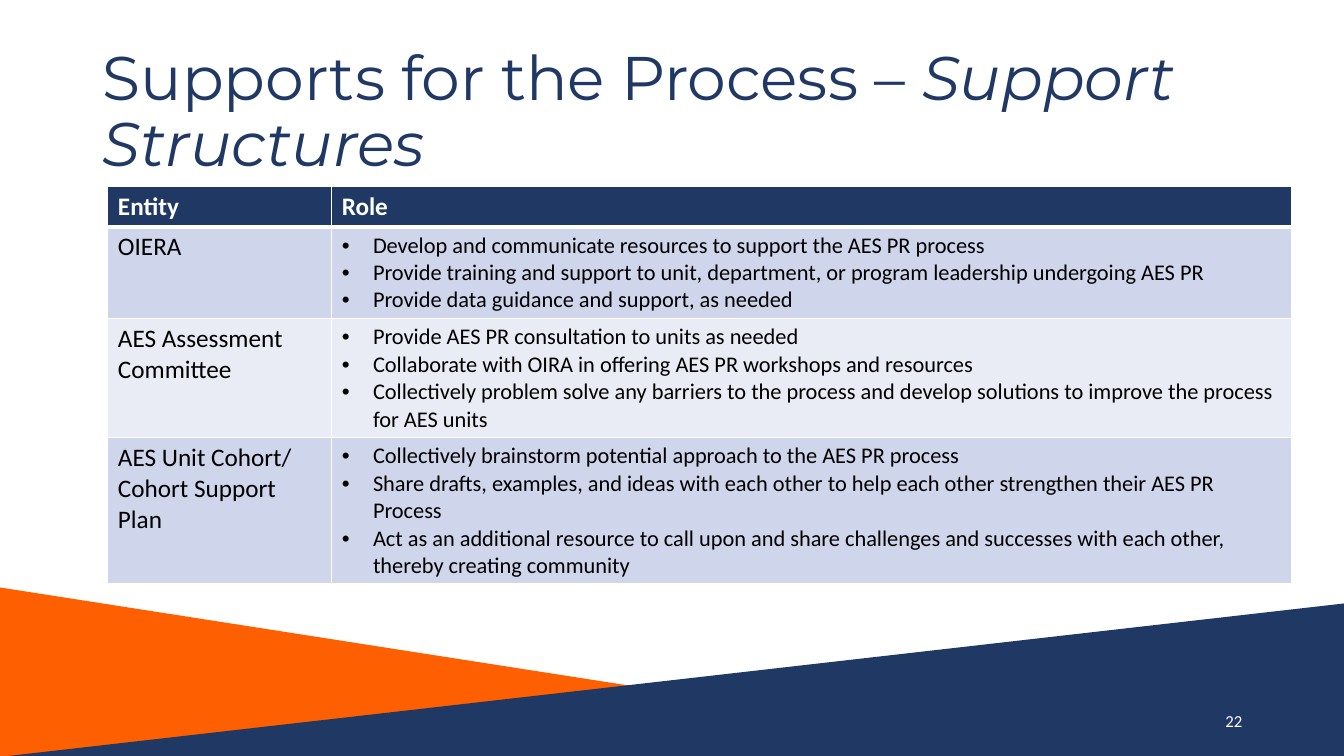
from lxml import etree
from pptx import Presentation
from pptx.dml.color import RGBColor
from pptx.enum import shapes, text
from pptx.oxml import ns
from pptx.util import Inches, Pt

NAVY, ORANGE, WHITE, BLACK = "203864", "FE5F00", "FFFFFF", "000000"
BANDS = ["CFD5EA", "E9EBF5"]


def paint(fmt, color):
    """Give a fill or a font a solid colour."""
    if hasattr(fmt, "solid"):
        fmt.solid()
        fmt.fore_color.rgb = RGBColor.from_string(color)
    else:
        fmt.color.rgb = RGBColor.from_string(color)


def add_text(p, words, color, **fmt):
    r = p.add_run()
    r.text = words
    for name, value in fmt.items():
        setattr(r.font, name, value)
    paint(r.font, color)


prs = Presentation()
prs.slide_width, prs.slide_height = Inches(13.33), Inches(7.5)
s = prs.slides.add_slide(prs.slide_layouts[5])

# Footer wedges
wedges = [(-0.05, 5.82, 10.77, 1.68, ORANGE, "1"), (0.08, 5.98, 13.31, 1.52, NAVY, "0")]
for x, y, w, h, color, flip in wedges:
    sp = s.shapes.add_shape(shapes.MSO_SHAPE.ISOSCELES_TRIANGLE,
                            Inches(x), Inches(y), Inches(w), Inches(h))
    sp.adjustments[0] = 1
    sp.shadow.inherit = False
    sp.line.fill.background()
    paint(sp.fill, color)
    sp._element.spPr.find(ns.qn("a:xfrm")).set("flipH", flip)

# Title
title = s.shapes.title
title.left, title.top, title.width, title.height = map(Inches, (0.92, 0.4, 11.5, 1.45))
tf = title.text_frame
tf.auto_size = text.MSO_AUTO_SIZE.NONE
tf.vertical_anchor = text.MSO_ANCHOR.MIDDLE
p = tf.paragraphs[0]
p.alignment = text.PP_ALIGN.LEFT
p.line_spacing = 0.9
for words, italic in [("Supports for the Process – ", False), ("Support Structures", True)]:
    add_text(p, words, NAVY, size=Pt(44), name="Montserrat", italic=italic)

# Slide number
sp = s.shapes.add_textbox(Inches(9.42), Inches(6.95), Inches(3), Inches(0.4))
tf = sp.text_frame
tf.word_wrap = True
tf.vertical_anchor = text.MSO_ANCHOR.MIDDLE
p = tf.paragraphs[0]
p.alignment = text.PP_ALIGN.RIGHT
add_text(p, "22", WHITE, size=Pt(12), name="Calibri")

# Table of entities and their roles
rows = [
    ("Entity", ["Role"]),
    ("OIERA", [
        "Develop and communicate resources to support the AES PR process",
        "Provide training and support to unit, department, or program leadership undergoing AES PR",
        "Provide data guidance and support, as needed"]),
    ("AES Assessment Committee", [
        "Provide AES PR consultation to units as needed",
        "Collaborate with OIRA in offering AES PR workshops and resources",
        "Collectively problem solve any barriers to the process and develop solutions "
        "to improve the process for AES units"]),
    ("AES Unit Cohort/ Cohort Support Plan", [
        "Collectively brainstorm potential approach to the AES PR process",
        "Share drafts, examples, and ideas with each other to help each other strengthen "
        "their AES PR Process",
        "Act as an additional resource to call upon and share challenges and successes "
        "with each other, thereby creating community"]),
]
table = s.shapes.add_table(len(rows), 2, Inches(1.07), Inches(1.85),
                           Inches(11.74), Inches(3.94)).table
for col, width in zip(table.columns, (2.22, 9.52)):
    col.width = Inches(width)
for row, height in zip(table.rows, (0.4, 0.91, 1.18, 1.45)):
    row.height = Inches(height)

for i, (entity, roles) in enumerate(rows):
    header = i == 0
    for j, lines in enumerate([[entity], roles]):
        cell = table.cell(i, j)
        paint(cell.fill, NAVY if header else BANDS[(i - 1) % 2])
        bulleted = j == 1 and not header
        for k, line in enumerate(lines):
            tf = cell.text_frame
            p = tf.add_paragraph() if k else tf.paragraphs[0]
            if bulleted:
                pPr = p._p.get_or_add_pPr()
                pPr.set("marL", str(Inches(0.31)))
                pPr.set("indent", str(-Inches(0.31)))
                etree.SubElement(pPr, ns.qn("a:buFont")).set("typeface", "Arial")
                etree.SubElement(pPr, ns.qn("a:buChar")).set("char", "•")
            add_text(p, line, WHITE if header else BLACK, name="Calibri",
                     size=Pt(16 if bulleted else 18), bold=header)
        # Borders come before the fill in the cell properties
        tcPr = cell._tc.get_or_add_tcPr()
        for n, side in enumerate("LRTB"):
            thick = (header and side == "B") or (i == 1 and side == "T")
            ln = etree.Element(ns.qn(f"a:ln{side}"), w=str(Pt(3 if thick else 1)))
            fill = etree.SubElement(ln, ns.qn("a:solidFill"))
            etree.SubElement(fill, ns.qn("a:srgbClr")).set("val", WHITE)
            tcPr.insert(n, ln)

prs.save("out.pptx")
